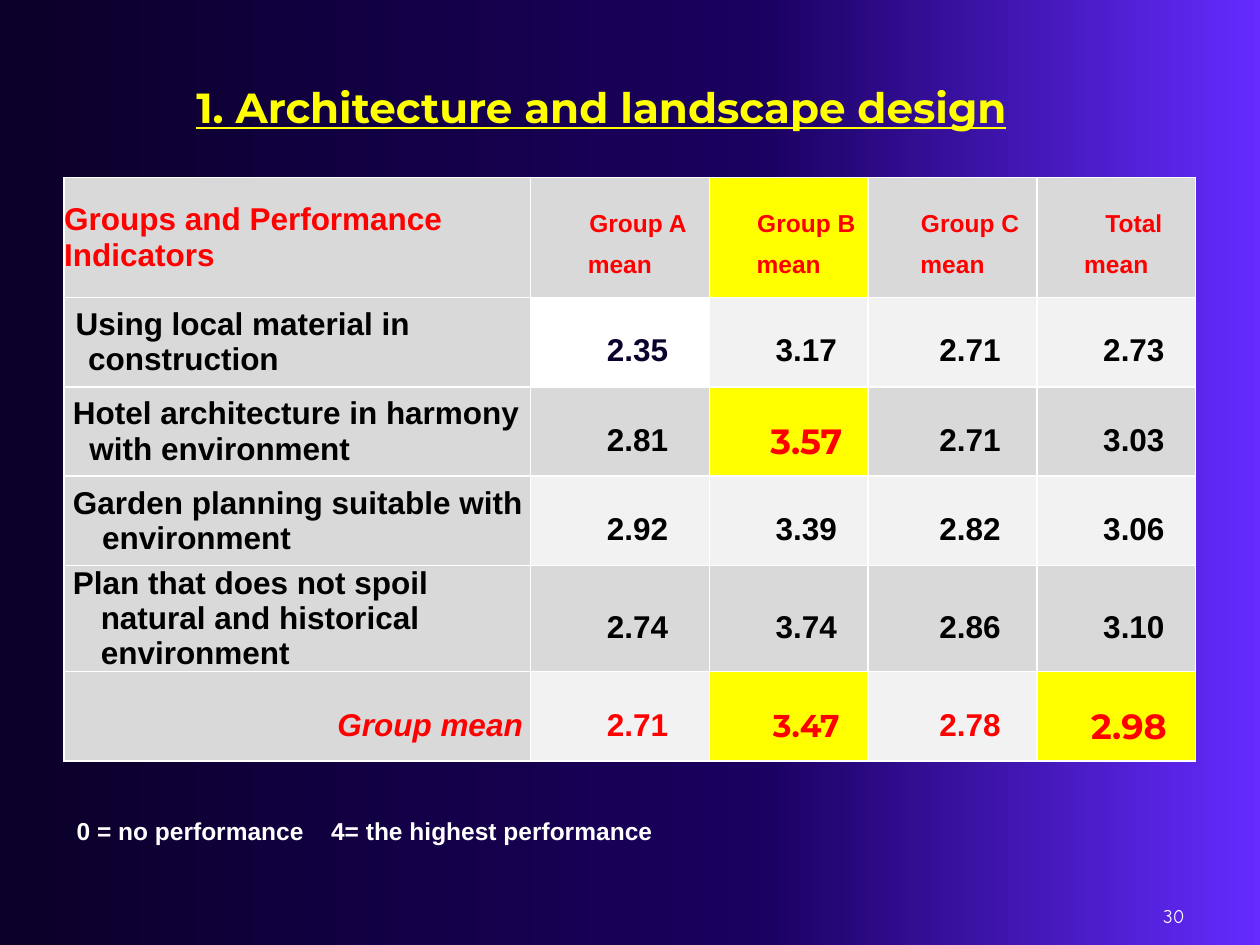
import dataclasses
import typing

import lxml.etree
import pptx
import pptx.dml.color
import pptx.enum.text
import pptx.oxml.ns
import pptx.util

Inches = pptx.util.Inches
Pt = pptx.util.Pt
qn = pptx.oxml.ns.qn
ALIGN = pptx.enum.text.PP_ALIGN
MIDDLE = pptx.enum.text.MSO_ANCHOR.MIDDLE

COLORS = {
    "night": "0B0029",
    "indigo": "1A005F",
    "violet": "652BFF",
    "navy": "0C002C",
    "white": "FFFFFF",
    "black": "000000",
    "red": "FF0000",
    "yellow": "FFFF00",
    "grey": "D9D9D9",
    "pale": "F2F2F2",
}
BACKGROUND_STOPS = [(0, "night"), (60, "indigo"), (100, "violet")]
COLUMN_WIDTHS = [3.7, 1.42, 1.26, 1.34, 1.26]
ROW_HEIGHTS = [0.95] + [0.71] * 5
HEADINGS = ["Group A mean", "Group B mean", "Group C mean", "Total mean"]


@dataclasses.dataclass
class Indicator:
    label: str
    left: float
    first_line: float
    means: list[str]
    fill: str
    color: str = "black"


@dataclasses.dataclass
class Highlight:
    fill: str
    color: str
    font: str = "Arial"
    size: int = 18


INDICATORS = [
    Indicator("Using local material in construction", 0.19, -0.1,
              ["2.35", "3.17", "2.71", "2.73"], "pale"),
    Indicator(" Hotel architecture in harmony with environment", 0.2, -0.4,
              ["2.81", "3.57", "2.71", "3.03"], "grey"),
    Indicator(" Garden planning suitable with environment", 0.3, -0.49,
              ["2.92", "3.39", "2.82", "3.06"], "pale"),
    Indicator(" Plan that does not spoil natural and historical environment", 0.29, -0.58,
              ["2.74", "3.74", "2.86", "3.10"], "grey"),
    Indicator("Group mean", 0, 0.28,
              ["2.71", "3.47", "2.78", "2.98 "], "pale", "red"),
]
HIGHLIGHTS = {
    (1, 1): Highlight("white", "navy"),
    (2, 2): Highlight("yellow", "red", "Montserrat", 20),
    (5, 2): Highlight("yellow", "red", "Montserrat"),
    (5, 4): Highlight("yellow", "red", "Montserrat", 20),
}


def rgb(color: str) -> pptx.dml.color.RGBColor:
    return pptx.dml.color.RGBColor.from_string(COLORS[color])


def write(frame: typing.Any, text: str, *, size: float, color: str, font: str = "Arial",
          bold: bool = True, italic: bool = False, underline: bool = False,
          align: typing.Any = ALIGN.LEFT) -> typing.Any:
    paragraph = frame.paragraphs[0]
    paragraph.alignment = align
    run = paragraph.add_run()
    run.text = text
    run.font.name = font
    run.font.size = Pt(size)
    run.font.bold = bold
    run.font.italic = italic
    run.font.underline = underline
    run.font.color.rgb = rgb(color)
    return paragraph


def paint_background(slide: typing.Any) -> None:
    fill = slide.background.fill
    fill.gradient()
    fill.gradient_angle = 0
    stops = slide.element.find(".//" + qn("a:gsLst"))
    for stop in list(stops):
        stops.remove(stop)
    for percent, color in BACKGROUND_STOPS:
        stop = lxml.etree.SubElement(stops, qn("a:gs"), pos=str(percent * 1000))
        lxml.etree.SubElement(stop, qn("a:srgbClr"), val=COLORS[color])


def add_borders(cell: typing.Any) -> None:
    properties = cell._tc.get_or_add_tcPr()
    for position, side in enumerate(("a:lnL", "a:lnR", "a:lnT", "a:lnB")):
        line = lxml.etree.Element(qn(side), w=str(Pt(1)))
        solid = lxml.etree.SubElement(line, qn("a:solidFill"))
        lxml.etree.SubElement(solid, qn("a:srgbClr"), val=COLORS["white"])
        properties.insert(position, line)


def fill_cell(cell: typing.Any, text: str, *, fill: str, left: float = 0,
              first_line: float = 0.28, inset: float = 0.06, spaced: bool = True,
              **text_format: typing.Any) -> None:
    cell.fill.solid()
    cell.fill.fore_color.rgb = rgb(fill)
    cell.vertical_anchor = MIDDLE
    cell.margin_left, cell.margin_right = Inches(inset), Inches(0.06)
    cell.margin_top = cell.margin_bottom = Inches(0)
    paragraph = write(cell.text_frame, text, **text_format)
    if spaced:
        paragraph.line_spacing = 1.5
        paragraph.space_before = Pt(3)
    properties = paragraph._p.get_or_add_pPr()
    properties.set("marL", str(Inches(left)))
    properties.set("indent", str(Inches(first_line)))
    add_borders(cell)


def add_performance_table(slide: typing.Any) -> None:
    table = slide.shapes.add_table(
        len(ROW_HEIGHTS), len(COLUMN_WIDTHS), Inches(0.51), Inches(1.41),
        Inches(sum(COLUMN_WIDTHS)), Inches(sum(ROW_HEIGHTS))).table
    table.first_row = table.horz_banding = False
    for column, width in zip(table.columns, COLUMN_WIDTHS):
        column.width = Inches(width)
    for row, height in zip(table.rows, ROW_HEIGHTS):
        row.height = Inches(height)

    fill_cell(table.cell(0, 0), "Groups and Performance Indicators", fill="grey",
              first_line=-0.2, inset=0, spaced=False, size=18, color="red")
    for column, heading in enumerate(HEADINGS, 1):
        fill_cell(table.cell(0, column), heading, fill="yellow" if column == 2 else "grey",
                  size=14, color="red", align=ALIGN.CENTER)
    for row, indicator in enumerate(INDICATORS, 1):
        summary = row == len(INDICATORS)
        fill_cell(table.cell(row, 0), indicator.label, fill="grey", left=indicator.left,
                  first_line=indicator.first_line, inset=0.06 if summary else 0,
                  spaced=summary, size=18, color=indicator.color, italic=summary,
                  align=ALIGN.RIGHT if summary else ALIGN.LEFT)
        for column, mean in enumerate(indicator.means, 1):
            look = HIGHLIGHTS.get((row, column), Highlight(indicator.fill, indicator.color))
            fill_cell(table.cell(row, column), mean, fill=look.fill, size=look.size,
                      color=look.color, font=look.font, align=ALIGN.CENTER)


def add_text(slide: typing.Any, text: str, left: float, top: float, width: float,
             height: float, **text_format: typing.Any) -> typing.Any:
    frame = slide.shapes.add_textbox(
        Inches(left), Inches(top), Inches(width), Inches(height)).text_frame
    frame.word_wrap = True
    write(frame, text, **text_format)
    return frame


def main() -> None:
    """Build the slide on architecture and landscape performance."""
    deck = pptx.Presentation()
    deck.slide_width, deck.slide_height = Inches(10), Inches(7.5)
    slide = deck.slides.add_slide(deck.slide_layouts[6])
    paint_background(slide)
    add_performance_table(slide)
    add_text(slide, "1. Architecture and landscape design", 1.46, 0.6, 7.17, 0.5,
             size=24, color="yellow", font="Montserrat", underline=True)
    scale = add_text(slide, "0 = no performance\t4= the highest performance",
                     0.51, 6.43, 5.43, 0.34, size=14, color="white")
    tabs = lxml.etree.SubElement(scale.paragraphs[0]._p.get_or_add_pPr(), qn("a:tabLst"))
    lxml.etree.SubElement(tabs, qn("a:tab"), pos=str(Inches(2.02)), algn="l")
    page_number = add_text(slide, "30", 7.17, 7.13, 2.33, 0.28, size=11, color="white",
                           font="Comic Neue", bold=False, align=ALIGN.RIGHT)
    page_number.vertical_anchor = MIDDLE
    deck.save("out.pptx")


if __name__ == "__main__":
    main()
